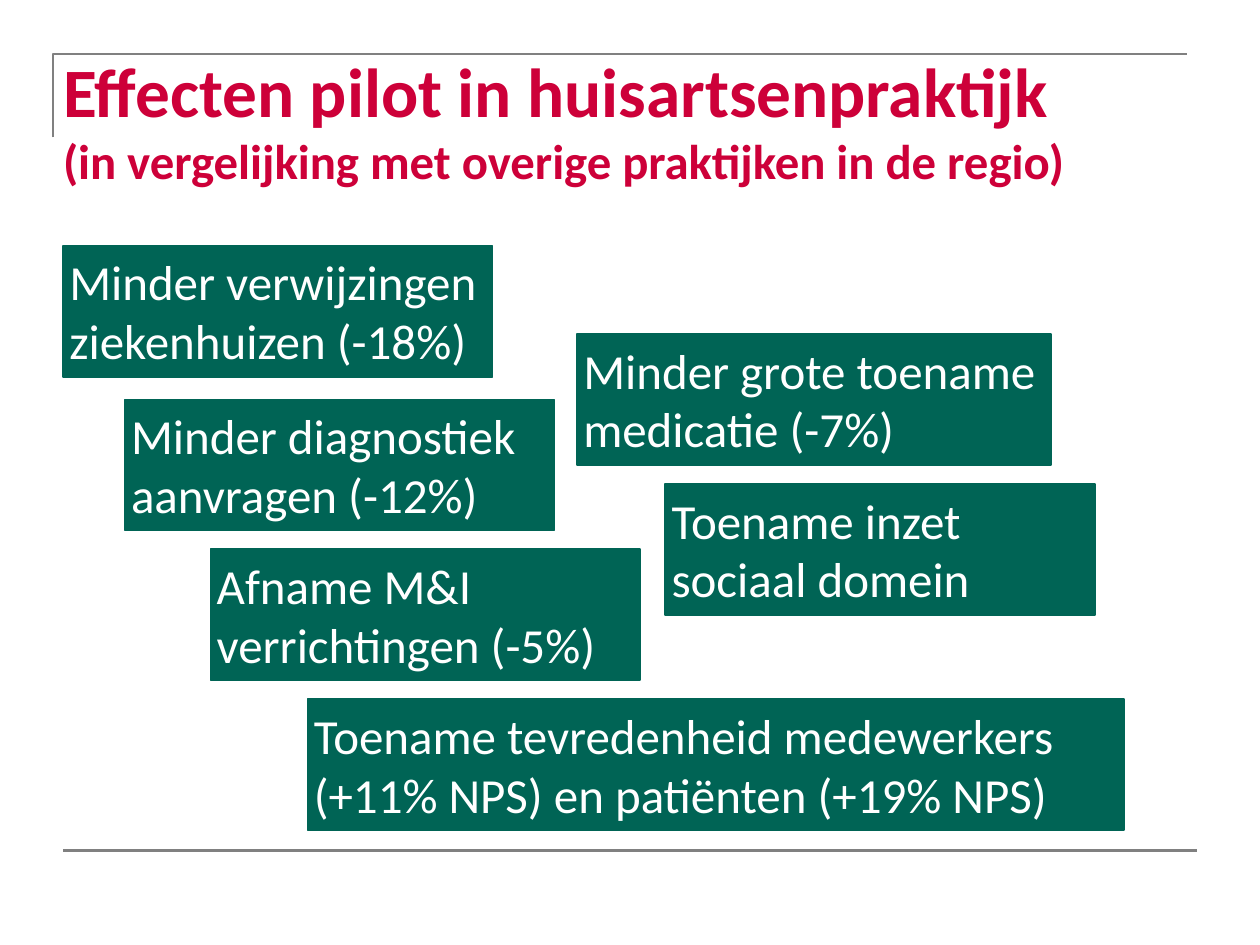
from lxml.etree import SubElement as Sub
from pptx import Presentation
from pptx.dml.color import RGBColor as RGB
from pptx.enum.shapes import MSO_CONNECTOR as Link, MSO_SHAPE as Kind
from pptx.enum.text import MSO_ANCHOR as Anchor, MSO_AUTO_SIZE as Fit, PP_ALIGN as Align
from pptx.oxml.ns import qn
from pptx.util import Pt

PX = 9144
FONT = "Calibri"
GREEN, RED, GREY, WHITE = "006455", "CD0039", "808080", "FFFFFF"
WIDE, TALL = 341, 104
CARDS = [
    ("Minder verwijzingen ziekenhuizen (-18%)", 50, 195, WIDE),
    ("Minder diagnostiek aanvragen (-12%)", 99, 317, WIDE),
    ("Afname M&I verrichtingen (-5%)", 167, 436, WIDE),
    ("Toename inzet sociaal domein", 528, 384, WIDE),
    ("Minder grote toename medicatie (-7%)", 458, 265, 376),
    ("Toename tevredenheid medewerkers (+11% NPS) en patiënten (+19% NPS)", 244, 555, 648),
]


def emu(*nums):
    """Turn px lengths into EMU."""
    return [num * PX for num in nums]


def paint(part, tint):
    """Set a solid colour on a fill, or on the fill of a line."""
    part.solid()
    part.fore_color.rgb = RGB.from_string(tint)


def stroke(item, tint, width):
    """Set the colour and width of an outline."""
    paint(item.line.fill, tint)
    item.line.width = Pt(width)


def setup(frame, inset, anchor, fit):
    """Prepare a text frame and return its first paragraph."""
    frame.word_wrap = True
    frame.auto_size = fit
    frame.vertical_anchor = anchor
    frame.margin_left = frame.margin_right = inset * PX
    frame.margin_top = frame.margin_bottom = inset * PX
    para = frame.paragraphs[0]
    para.alignment = Align.LEFT
    return para


def write(para, text, size, tint, bold=False):
    """Add one formatted run."""
    run = para.add_run()
    run.text = text
    run.font.name = FONT
    run.font.size = Pt(size)
    run.font.bold = bold
    run.font.color.rgb = RGB.from_string(tint)


def corner(slide, x, y, w, h):
    """Draw the open corner rule around the title."""
    pen = slide.shapes.build_freeform(x, y + h, scale=PX)
    pen.add_line_segments([(x, y), (x + w, y)], close=False)
    rule = pen.convert_to_shape()
    rule.shadow.inherit = False
    rule.fill.background()
    stroke(rule, GREY, 1.5)


def footer(slide, x, y, w):
    """Draw the rule at the foot of the slide."""
    rule = slide.shapes.add_connector(Link.STRAIGHT, *emu(x, y, x + w, y))
    stroke(rule, GREY, 1.5)
    Sub(rule._element.spPr, qn("a:effectLst"))


def header(slide, x, y, w, h):
    """Place the title and its smaller second line."""
    title = slide.shapes.title
    title.left, title.top, title.width, title.height = emu(x, y, w, h)
    para = setup(title.text_frame, 0, Anchor.TOP, Fit.NONE)
    write(para, "Effecten pilot in huisartsenpraktijk", 39.6, RED, True)
    para.add_line_break()
    write(para, "(in vergelijking met overige praktijken in de regio)", 27.9, RED, True)


def card(slide, text, x, y, w, h=TALL):
    """Place one green box with an effect."""
    box = slide.shapes.add_shape(Kind.RECTANGLE, *emu(x, y, w, h))
    box.shadow.inherit = False
    paint(box.fill, GREEN)
    stroke(box, GREEN, 1)
    para = setup(box.text_frame, 5, Anchor.TOP, Fit.SHAPE_TO_FIT_TEXT)
    write(para, text, 28, WHITE)


def main():
    """Build and save the slide."""
    deck = Presentation()
    deck.slide_width, deck.slide_height = emu(1000, 750)
    slide = deck.slides.add_slide(deck.slide_layouts[5])
    corner(slide, 42, 43, 900, 66)
    footer(slide, 50, 675, 900)
    header(slide, 50, 38, 883, 86)
    for item in CARDS:
        card(slide, *item)
    deck.save("out.pptx")


if __name__ == "__main__":
    main()
